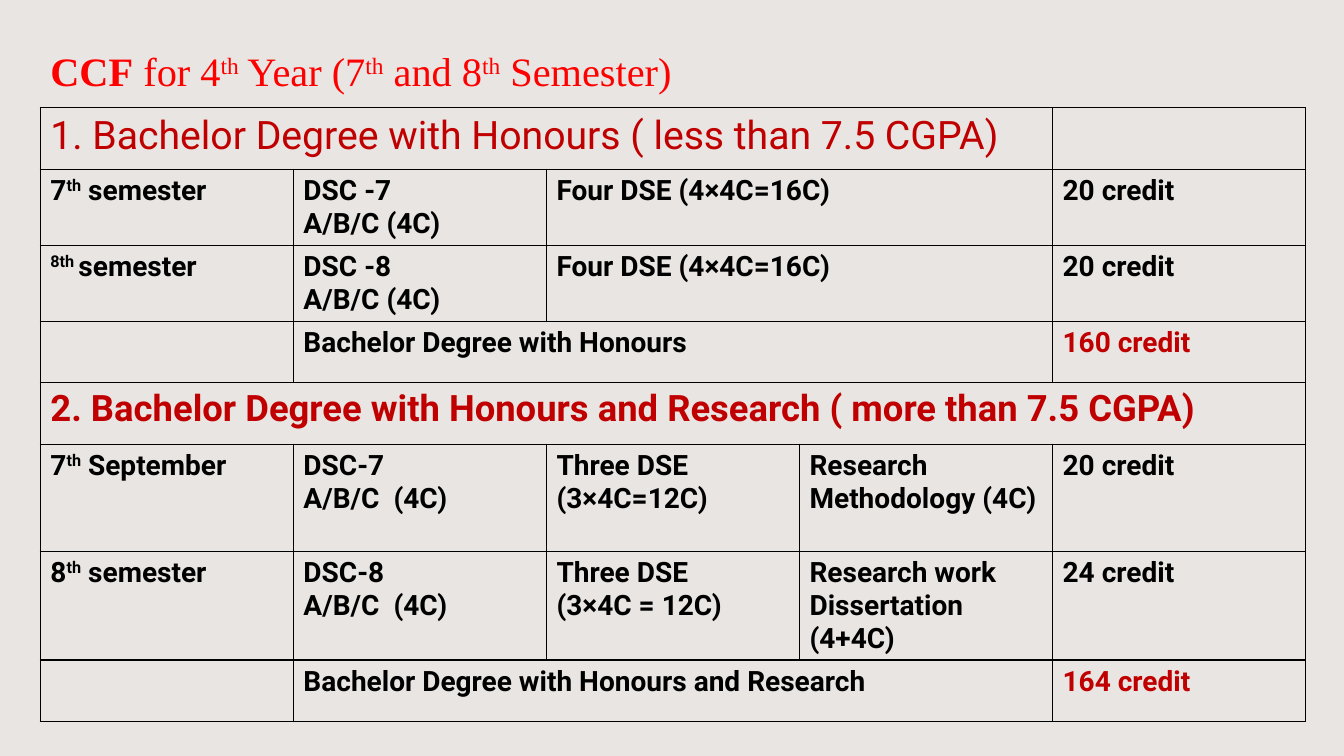
"""Build the slide on the fourth-year credit framework."""
from dataclasses import dataclass

from lxml.etree import SubElement
from pptx import Presentation
from pptx.dml.color import RGBColor
from pptx.enum.text import MSO_ANCHOR, MSO_AUTO_SIZE, PP_ALIGN
from pptx.oxml import parse_xml
from pptx.oxml.ns import nsdecls, qn
from pptx.slide import Slide
from pptx.table import Table, _Cell
from pptx.text.text import _Paragraph
from pptx.util import Inches, Pt


@dataclass(frozen=True)
class Theme:
    background: RGBColor = RGBColor(0xE8, 0xE5, 0xE2)
    title: RGBColor = RGBColor(0xFF, 0x00, 0x00)
    accent: RGBColor = RGBColor(0xC0, 0x00, 0x00)
    ink: RGBColor = RGBColor(0x00, 0x00, 0x00)
    title_font: str = "Times New Roman"
    table_font: str = "Roboto"
    title_size: float = 28.8
    honours_size: float = 28
    research_size: float = 26
    entry_size: float = 20
    border_width: float = 1


THEME = Theme()


@dataclass(frozen=True)
class Style:
    font: str
    size: float
    color: RGBColor
    bold: bool = True


TITLE = Style(THEME.title_font, THEME.title_size, THEME.title, bold=False)
HONOURS = Style(THEME.table_font, THEME.honours_size, THEME.accent, bold=False)
RESEARCH = Style(THEME.table_font, THEME.research_size, THEME.accent)
ENTRY = Style(THEME.table_font, THEME.entry_size, THEME.ink)
TOTAL = Style(THEME.table_font, THEME.entry_size, THEME.accent)


@dataclass(frozen=True)
class Entry:
    """Hold a cell's text, in which ^marks^ enclose superscripts."""
    text: str = ""
    span: int = 1
    style: Style = ENTRY


@dataclass(frozen=True)
class CreditRow:
    height: float
    entries: tuple[Entry, ...]


def semester_row(height: float, semester: str, core: str,
                 electives: tuple[Entry, ...], credit: str) -> CreditRow:
    """Describe the courses of one semester."""
    return CreditRow(height, (Entry(semester), Entry(core), *electives, Entry(credit)))


def total_row(degree: str, credit: str) -> CreditRow:
    """Describe the total credit of one degree."""
    return CreditRow(0.61, (Entry(), Entry(degree, 3), Entry(credit, style=TOTAL)))


FOUR_DSE = (Entry("Four DSE (4×4C=16C)", 2),)
CREDIT_ROWS = (
    CreditRow(0.61, (Entry("1. Bachelor Degree with Honours ( less than 7.5 CGPA)", 4, HONOURS),
                     Entry())),
    semester_row(0.74, "7^th^ semester", "DSC -7\nA/B/C (4C)", FOUR_DSE, "20 credit"),
    semester_row(0.74, "^8th ^semester", "DSC -8\nA/B/C (4C)", FOUR_DSE, "20 credit"),
    total_row("Bachelor Degree with Honours", "160 credit"),
    CreditRow(0.61, (Entry("2. Bachelor Degree with Honours and Research ( more than 7.5 CGPA)",
                           5, RESEARCH),)),
    semester_row(1.06, "7^th^ September", "DSC-7\nA/B/C  (4C)",
                 (Entry("Three DSE (3×4C=12C)"), Entry("Research Methodology (4C)")),
                 "20 credit"),
    semester_row(1.06, "8^th^ semester", "DSC-8\nA/B/C  (4C)",
                 (Entry("Three DSE\n(3×4C = 12C)"),
                  Entry("Research work Dissertation (4+4C)")),
                 "24 credit"),
    total_row("Bachelor Degree with Honours and Research", "164 credit"),
)
COLUMN_COUNT = 5
COLUMN_WIDTH = 2.51


def write_runs(paragraph: _Paragraph, marked: str, style: Style) -> None:
    """Write text with its superscripts into a paragraph."""
    for position, words in enumerate(marked.split("^")):
        if not words:
            continue
        run = paragraph.add_run()
        run.text = words
        run.font.name = style.font
        run.font.size = Pt(style.size)
        run.font.bold = style.bold
        run.font.color.rgb = style.color
        if position % 2:
            run._r.get_or_add_rPr().set("baseline", "30000")


def rule_cell(cell: _Cell) -> None:
    """Clear a cell's fill and rule its four edges."""
    cell.fill.background()
    properties = cell._tc.get_or_add_tcPr()
    for index, edge in enumerate(("lnL", "lnR", "lnT", "lnB")):
        border = parse_xml(f'<a:{edge} {nsdecls("a")} w="{Pt(THEME.border_width)}"/>')
        SubElement(SubElement(border, qn("a:solidFill")), qn("a:srgbClr"), val=str(THEME.ink))
        properties.insert(index, border)


def fill_row(table: Table, row_index: int, credit_row: CreditRow) -> None:
    """Merge and write the cells of one row."""
    table.rows[row_index].height = Inches(credit_row.height)
    column = 0
    for entry in credit_row.entries:
        cell = table.cell(row_index, column)
        if entry.span > 1:
            cell.merge(table.cell(row_index, column + entry.span - 1))
        for line_index, line in enumerate(entry.text.split("\n")):
            frame = cell.text_frame
            paragraph = frame.add_paragraph() if line_index else frame.paragraphs[0]
            write_runs(paragraph, line, entry.style)
        column += entry.span


def add_title(slide: Slide) -> None:
    """Place and write the slide title."""
    title = slide.shapes.title
    title.left, title.top = Inches(0.4), Inches(0.46)
    title.width, title.height = Inches(11.68), Inches(0.55)
    frame = title.text_frame
    frame.auto_size = MSO_AUTO_SIZE.NONE
    frame.vertical_anchor = MSO_ANCHOR.TOP
    frame.margin_top = Inches(0)
    heading = frame.paragraphs[0]
    heading.alignment = PP_ALIGN.LEFT
    write_runs(heading, "CCF^^ for 4^th^ Year (7^th^ and 8^th^ Semester)", TITLE)
    heading.runs[0].font.bold = True


def add_credit_table(slide: Slide) -> None:
    """Add the table of semesters and credits."""
    height = sum(row.height for row in CREDIT_ROWS)
    table = slide.shapes.add_table(
        len(CREDIT_ROWS), COLUMN_COUNT, Inches(0.4), Inches(1.07),
        Inches(COLUMN_COUNT * COLUMN_WIDTH), Inches(height)).table
    table.first_row = False
    table.horz_banding = False
    for column in table.columns:
        column.width = Inches(COLUMN_WIDTH)
    for cell in table.iter_cells():
        rule_cell(cell)
    for row_index, credit_row in enumerate(CREDIT_ROWS):
        fill_row(table, row_index, credit_row)


def main() -> None:
    """Build and save the presentation."""
    presentation = Presentation()
    presentation.slide_width = Inches(13.33)
    presentation.slide_height = Inches(7.5)
    slide = presentation.slides.add_slide(presentation.slide_layouts.get_by_name("Title Only"))
    slide.background.fill.solid()
    slide.background.fill.fore_color.rgb = THEME.background
    add_title(slide)
    add_credit_table(slide)
    presentation.save("out.pptx")


if __name__ == "__main__":
    main()
